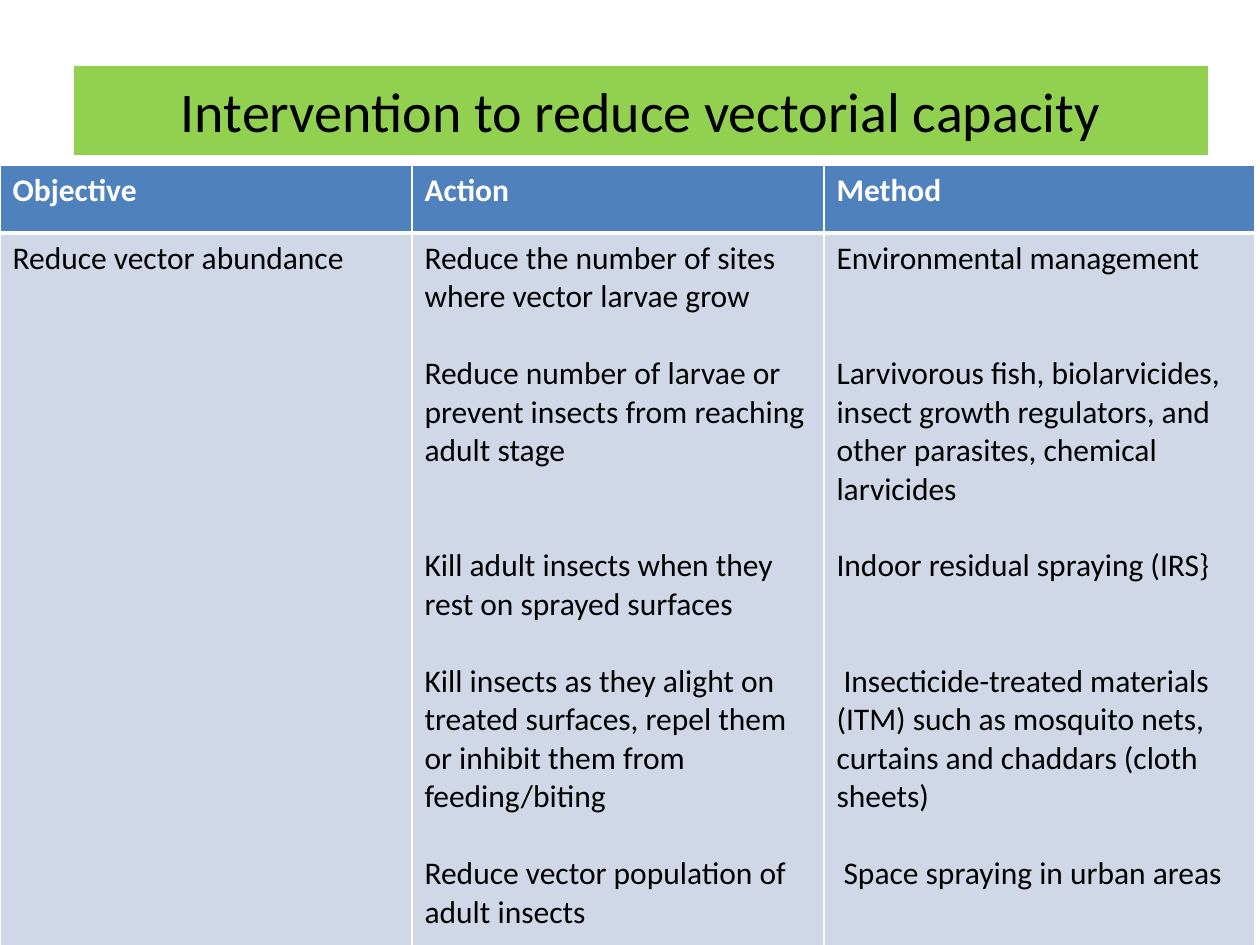
from lxml import etree
from pptx import Presentation
from pptx import util as u
from pptx.dml.color import RGBColor
from pptx.enum import text
from pptx.oxml.ns import qn

PX_PER_INCH = 126
FONT = "Calibri"
LINE_PT = 22  # height of one line of 18 pt text
BLACK = RGBColor(0x00, 0x00, 0x00)
WHITE = RGBColor(0xFF, 0xFF, 0xFF)
GREEN = RGBColor(0x92, 0xD0, 0x50)
BLUE = RGBColor(0x4F, 0x81, 0xBD)
PALE_BLUE = RGBColor(0xD0, 0xD8, 0xE8)

TITLE = "Intervention to reduce vectorial capacity"
HEADERS = ["Objective", "Action", "Method"]
# Each entry: (text, empty lines above it, first-line indent in px)
OBJECTIVES = [("Reduce vector abundance", 0, 0)]
ACTIONS = [
    ("Reduce the number of sites where vector larvae grow", 0, 0),
    ("Reduce number of larvae or prevent insects from reaching adult stage", 1, 0),
    ("Kill adult insects when they rest on sprayed surfaces", 2, 0),
    ("Kill insects as they alight on treated surfaces, repel them or inhibit "
     "them from feeding/biting", 1, 0),
    ("Reduce vector population of adult insects", 1, 0),
]
METHODS = [
    ("Environmental management", 0, 0),
    ("Larvivorous fish, biolarvicides, insect growth regulators, and other "
     "parasites, chemical larvicides", 2, 0),
    ("Indoor residual spraying (IRS}", 1, 0),
    ("Insecticide-treated materials (ITM) such as mosquito nets, curtains and "
     "chaddars (cloth sheets)", 2, 7),
    ("Space spraying in urban areas", 1, 7),
]


def px(n):
    return u.Emu(round(n * 914400 / PX_PER_INCH))


def set_font(p, size, color, bold=False):
    p.font.name, p.font.size, p.font.bold = FONT, u.Pt(size), bold
    p.font.color.rgb = color


def set_borders(cell, **widths):
    """Draw white borders; widths are points keyed by L, R, T and B."""
    tcPr = cell._tc.get_or_add_tcPr()
    for i, side in enumerate("LRTB"):
        ln = etree.Element(qn(f"a:ln{side}"), w=str(u.Pt(widths.get(side, 1))))
        fill = etree.SubElement(ln, qn("a:solidFill"))
        etree.SubElement(fill, qn("a:srgbClr"), val=str(WHITE))
        tcPr.insert(i, ln)


def fill_cell(cell, entries, fill, color, bold=False):
    cell.fill.solid()
    cell.fill.fore_color.rgb = fill
    tf = cell.text_frame
    for i, (words, gap, indent) in enumerate(entries):
        p = tf.add_paragraph() if i else tf.paragraphs[0]
        p.text = words
        if gap:
            p.space_before = u.Pt(gap * LINE_PT)
        if indent:
            p._p.get_or_add_pPr().set("indent", str(px(indent)))
        set_font(p, 18, color, bold)


def add_title(s, x, y, w, h):
    sp = s.shapes.title
    sp.left, sp.top, sp.width, sp.height = map(px, (x, y, w, h))
    sp.fill.solid()
    sp.fill.fore_color.rgb = GREEN
    tf = sp.text_frame
    tf.text = TITLE
    tf.word_wrap = True
    tf.auto_size = text.MSO_AUTO_SIZE.NONE
    tf.vertical_anchor = text.MSO_ANCHOR.MIDDLE
    p = tf.paragraphs[0]
    p.alignment = text.PP_ALIGN.CENTER
    set_font(p, 32, BLACK)


def add_interventions(s, x, y, w, h):
    header_h, col_w = 68, 412
    table = s.shapes.add_table(2, 3, px(x), px(y), px(w), px(h)).table
    for col, width in zip(table.columns, (col_w, col_w, w - 2 * col_w)):
        col.width = px(width)
    for row, height in zip(table.rows, (header_h, h - header_h)):
        row.height = px(height)
    for c, (header, body) in enumerate(zip(HEADERS, (OBJECTIVES, ACTIONS, METHODS))):
        fill_cell(table.cell(0, c), [(header, 0, 0)], BLUE, WHITE, bold=True)
        set_borders(table.cell(0, c), B=3)
        fill_cell(table.cell(1, c), body, PALE_BLUE, BLACK)
        set_borders(table.cell(1, c), T=3)


def main():
    prs = Presentation()
    prs.slide_width, prs.slide_height = px(1260), px(945)
    s = prs.slides.add_slide(prs.slide_layouts[5])
    add_title(s, 74, 66, 1134, 89)
    add_interventions(s, 0, 165, 1255, 932)
    prs.save("out.pptx")


if __name__ == "__main__":
    main()
